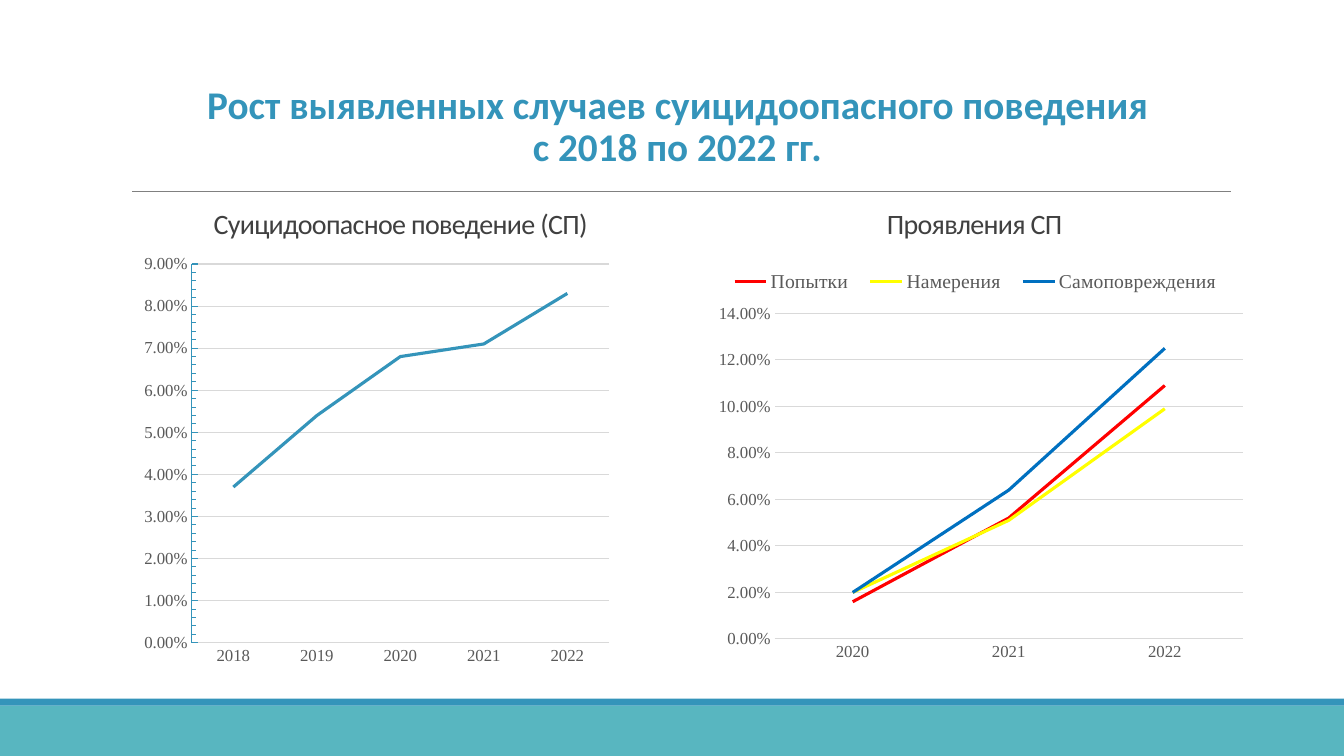
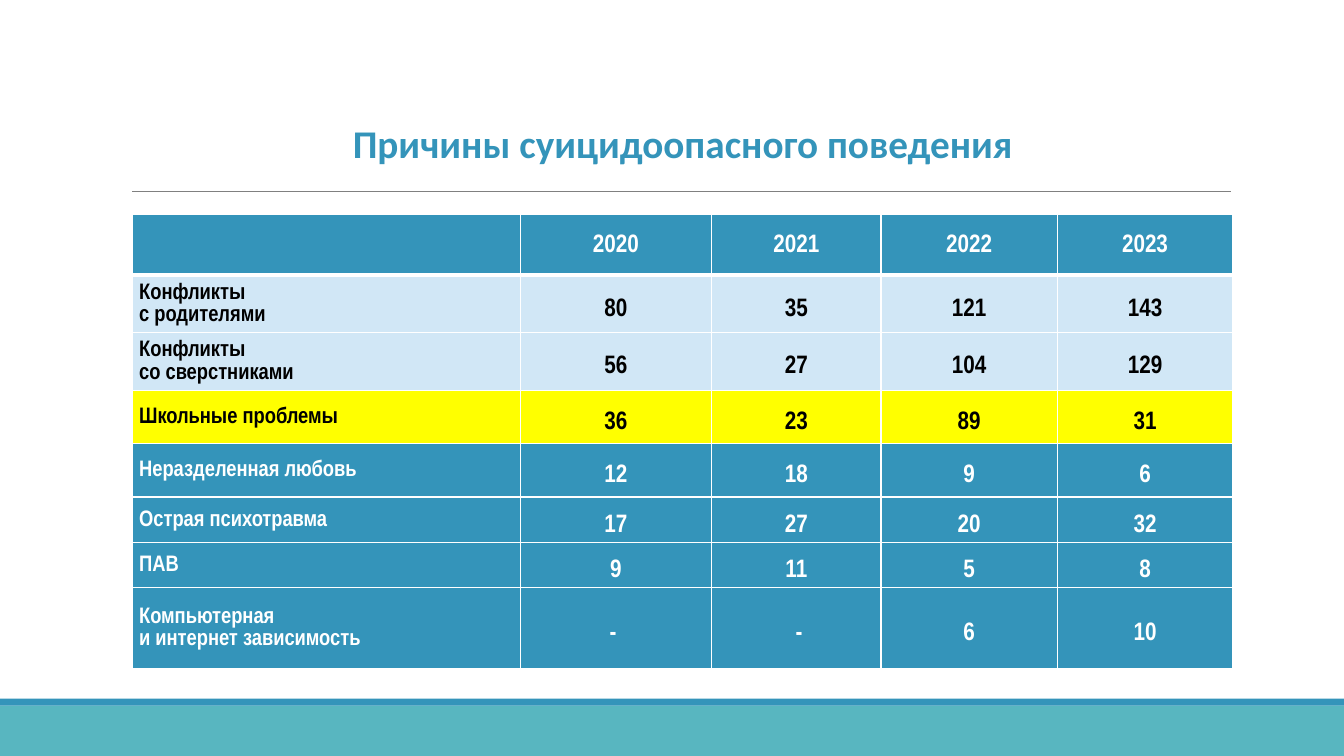
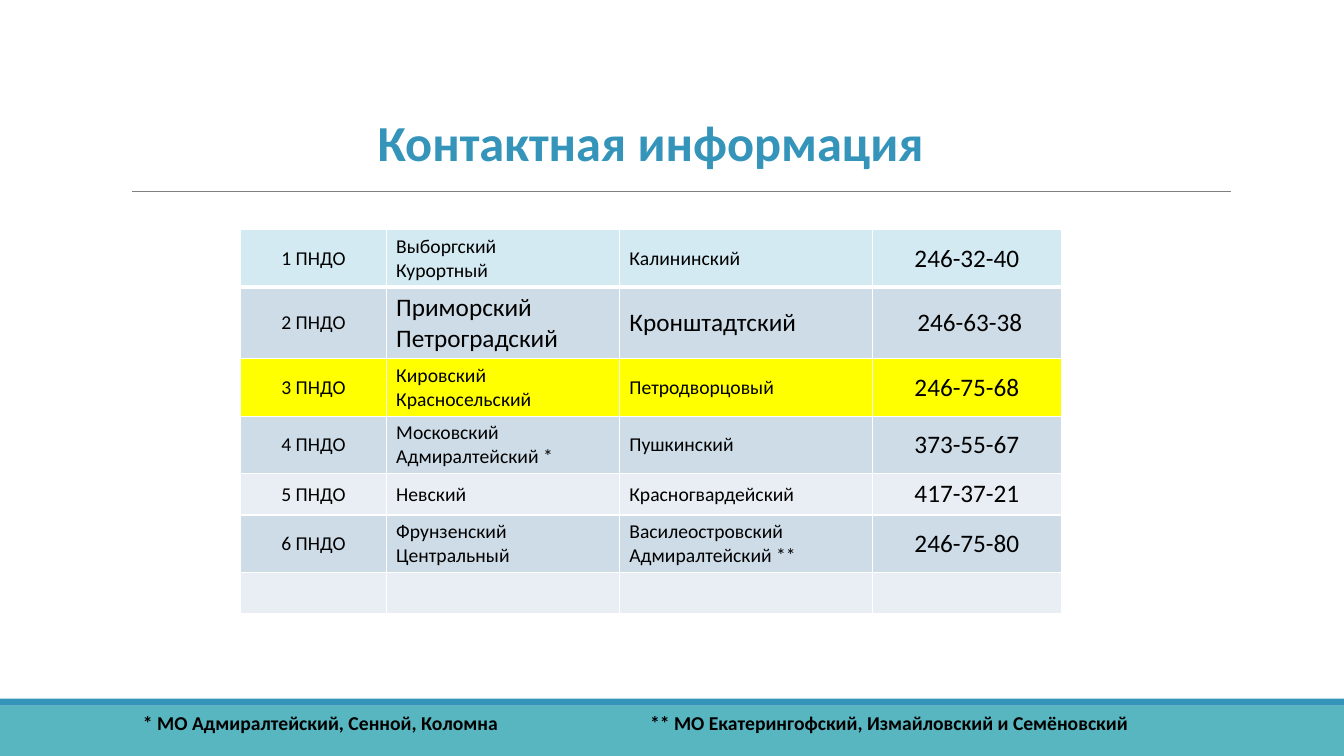
import collections

import lxml.etree
import pptx
import pptx.chart.data
import pptx.dml.color
import pptx.enum.chart
import pptx.enum.shapes
import pptx.enum.text
import pptx.oxml.ns
import pptx.util

SLIDE_WIDTH = pptx.util.Inches(13.33)
SLIDE_HEIGHT = pptx.util.Inches(7.5)

BLUE, TEAL, YELLOW = "3494BA", "58B6C0", "FFFF00"
BLACK, WHITE, RULE_GREY = "000000", "FFFFFF", "808080"
LABEL_GREY, GRID_GREY, HEADING_GREY = "595959", "D9D9D9", "404040"
PALE_BLUE, ICE, MIST, FROST = "D1E7F6", "D4EAF3", "CEDCE7", "E8EEF3"

CENTER = pptx.enum.text.PP_ALIGN.CENTER
LEFT = pptx.enum.text.PP_ALIGN.LEFT
MIDDLE = pptx.enum.text.MSO_ANCHOR.MIDDLE
TICK = pptx.enum.chart.XL_TICK_MARK
qn = pptx.oxml.ns.qn

# Every box is given in percent of the slide's width and height
Box = collections.namedtuple("Box", "left top width height")
Look = collections.namedtuple("Look", "size font color bold")


def across(percent):
    return round(SLIDE_WIDTH * percent / 100)


def down(percent):
    return round(SLIDE_HEIGHT * percent / 100)


def place(box):
    return across(box.left), down(box.top), across(box.width), down(box.height)


def rgb(color):
    return pptx.dml.color.RGBColor.from_string(color)


def style_font(font, look):
    font.size = pptx.util.Pt(look.size)
    font.name = look.font
    font.bold = look.bold
    font.color.rgb = rgb(look.color)


def style_line(line, color, width):
    line.color.rgb = rgb(color)
    line.width = pptx.util.Pt(width)


def write(frame, text, look, align=LEFT, spacing=1.0):
    frame.text = text
    frame.word_wrap = True
    for para in frame.paragraphs:
        para.alignment = align
        para.line_spacing = spacing
        for span in para.runs:
            style_font(span.font, look)


def add_text(page, box, text, look, align=LEFT, spacing=1.0):
    frame = page.shapes.add_textbox(*place(box)).text_frame
    write(frame, text, look, align, spacing)
    return frame


# Shared slide parts: bottom bands, rule and title
def add_page(deck, title, title_box, title_size):
    page = deck.slides.add_slide(deck.slide_layouts[6])
    for box, color in ((Box(0, 93.33, 100, 6.67), TEAL),
                       (Box(0, 92.4, 100, 0.93), BLUE)):
        band = page.shapes.add_shape(
            pptx.enum.shapes.MSO_SHAPE.RECTANGLE, *place(box))
        band.shadow.inherit = False
        band.fill.solid()
        band.fill.fore_color.rgb = rgb(color)
        band.line.fill.background()

    rule = page.shapes.add_connector(
        pptx.enum.shapes.MSO_CONNECTOR.STRAIGHT,
        across(9.83), down(25.33), across(91.58), down(25.33))
    style_line(rule.line, RULE_GREY, 0.5)
    lxml.etree.SubElement(rule.element.spPr, qn("a:effectLst"))

    look = Look(title_size, "Calibri", BLUE, True)
    frame = add_text(page, title_box, title, look, CENTER, 0.9)
    frame.vertical_anchor = MIDDLE
    return page


# Charts
def set_layout(parent, index, box, inner=False):
    for old in parent.findall(qn("c:layout")):
        parent.remove(old)
    layout = lxml.etree.Element(qn("c:layout"))
    parent.insert(index, layout)
    manual = lxml.etree.SubElement(layout, qn("c:manualLayout"))
    settings = [("layoutTarget", "inner")] if inner else []
    settings += [("xMode", "edge"), ("yMode", "edge")]
    settings += zip("xywh", box)
    for name, value in settings:
        lxml.etree.SubElement(manual, qn("c:" + name)).set("val", str(value))


def add_line_chart(page, box, kind, years, series, plot_box, top, step):
    data = pptx.chart.data.CategoryChartData(number_format="0.00%")
    data.categories = years
    for name, values, _ in series:
        data.add_series(name, values)
    chart = page.shapes.add_chart(kind, *place(box), data).chart
    chart.has_title = False
    chart.has_legend = False
    label = Look(12, "Times New Roman", LABEL_GREY, False)
    style_font(chart.font, label)
    set_layout(chart.element.find(".//" + qn("c:plotArea")), 0, plot_box, True)

    for axis in (chart.category_axis, chart.value_axis):
        axis.major_tick_mark = axis.minor_tick_mark = TICK.NONE
        style_font(axis.tick_labels.font, label)
    style_line(chart.category_axis.format.line, GRID_GREY, 0.75)

    scale = chart.value_axis
    scale.minimum_scale, scale.maximum_scale = 0, top
    scale.major_unit = step
    scale.tick_labels.number_format = "0.00%"
    scale.tick_labels.number_format_is_linked = False
    scale.format.line.fill.background()
    style_line(scale.major_gridlines.format.line, GRID_GREY, 0.75)

    for line, (_, _, color) in zip(chart.plots[0].series, series):
        style_line(line.format.line, color, 2.25)
        line.smooth = False
        line.marker.style = pptx.enum.chart.XL_MARKER_STYLE.NONE
    return chart


def add_ruled_scale(chart, minor_step):
    scale = chart.value_axis
    scale.major_tick_mark = scale.minor_tick_mark = TICK.INSIDE
    scale.minor_unit = minor_step
    style_line(scale.format.line, BLUE, 0.75)


def add_legend(chart, legend_box):
    chart.has_legend = True
    legend = chart.legend
    legend.position = pptx.enum.chart.XL_LEGEND_POSITION.TOP
    legend.include_in_layout = False
    style_font(legend.font, Look(14, "Times New Roman", LABEL_GREY, False))
    set_layout(chart.element.find(".//" + qn("c:legend")), 1, legend_box)


def add_chart_heading(page, box, text):
    frame = add_text(page, box, text, Look(20, "Calibri", HEADING_GREY, False))
    frame.paragraphs[0].runs[0].font._element.set("spc", "-50")


# Tables
def set_borders(cell, row):
    properties = cell._tc.get_or_add_tcPr()
    thick_side = {0: "B", 1: "T"}.get(row)
    for side in "LRTB":
        width = 3 if side == thick_side else 1
        border = lxml.etree.SubElement(properties, qn("a:ln" + side))
        border.set("w", str(pptx.util.Pt(width)))
        fill = lxml.etree.SubElement(border, qn("a:solidFill"))
        lxml.etree.SubElement(fill, qn("a:srgbClr")).set("val", WHITE)


def add_grid(page, box, columns, rows, fills):
    """Table whose columns and rows share the box in the given proportions."""
    table = page.shapes.add_table(len(rows), len(columns), *place(box)).table
    table.horz_banding = False
    for column, part in zip(table.columns, columns):
        column.width = round(across(box.width) * part / sum(columns))
    for row, part in zip(table.rows, rows):
        row.height = round(down(box.height) * part / sum(rows))
    for i, color in enumerate(fills):
        for cell in table.rows[i].cells:
            set_borders(cell, i)
            cell.fill.solid()
            cell.fill.fore_color.rgb = rgb(color)
            cell.vertical_anchor = MIDDLE
    return table


def add_causes_table(page, box):
    records = [
        ("", "2020", "2021", "2022", "2023"),
        ("Конфликты\vс родителями", "80", "35", "121", "143"),
        ("Конфликты\vсо сверстниками", "56", "27", "104", "129"),
        ("Школьные проблемы", "36", "23", "89", "31"),
        ("Неразделенная любовь", "12", "18", "9", "6"),
        ("Острая психотравма", "17", "27", "20", "32"),
        ("ПАВ", "9", "11", "5", "8"),
        ("Компьютерная\vи интернет зависимость", "- ", " -", "6", "10"),
    ]
    fills = [BLUE, PALE_BLUE, PALE_BLUE, YELLOW] + [BLUE] * 4
    table = add_grid(page, box, (3.85, 1.9, 1.68, 1.75, 1.74),
                     (0.6, 0.57, 0.57, 0.53, 0.53, 0.44, 0.44, 0.8), fills)
    for i, record in enumerate(records):
        color = WHITE if fills[i] == BLUE else BLACK
        for j, text in enumerate(record):
            cell = table.cell(i, j)
            cell.margin_left = cell.margin_right = pptx.util.Inches(0.07)
            cell.margin_top = cell.margin_bottom = 0
            look = Look(18 if j else 16, "Arial Narrow", color, True)
            write(cell.text_frame, text, look, CENTER if j else LEFT,
                  1.5 if i and j else 1.07)


def add_contacts_table(page, box):
    records = [
        ("1 ПНДО", "Выборгский\nКурортный", "Калининский", "246-32-40"),
        ("2 ПНДО", "Приморский\nПетроградский", "Кронштадтский", " 246-63-38"),
        ("3 ПНДО", "Кировский Красносельский", "Петродворцовый", "246-75-68"),
        ("4 ПНДО", "Московский\nАдмиралтейский *", "Пушкинский", "373-55-67"),
        ("5 ПНДО", "Невский", "Красногвардейский", "417-37-21"),
        ("6 ПНДО", "Фрунзенский\nЦентральный",
         "Василеостровский\nАдмиралтейский **", "246-75-80"),
    ]
    table = add_grid(page, box, (1.44, 2.31, 2.51, 1.87),
                     (0.57, 0.71, 0.57, 0.57, 0.41, 0.57, 0.41),
                     (ICE, MIST, YELLOW, MIST, FROST, MIST, FROST))
    for i, record in enumerate(records):
        for j, text in enumerate(record):
            large = j == 3 or (i == 1 and j > 0)
            look = Look(18 if large else 14, "Calibri", BLACK, False)
            write(table.cell(i, j).text_frame, text, look,
                  CENTER if j in (0, 3) else LEFT)


# Slides
def build_growth(deck):
    page = add_page(
        deck,
        "Рост выявленных случаев суицидоопасного поведения\nс 2018 по 2022 гг.",
        Box(9.45, 10, 81.9, 13.87), 28)
    kinds = pptx.enum.chart.XL_CHART_TYPE
    behaviour = add_line_chart(
        page, Box(9.45, 31.47, 36.98, 57.6), kinds.LINE_STACKED,
        ("2018", "2019", "2020", "2021", "2022"),
        [("Суицидоопасное поведение", (0.037, 0.054, 0.068, 0.071, 0.083), BLUE)],
        (0.13, 0.06, 0.84, 0.87), 0.09, 0.01)
    add_ruled_scale(behaviour, 0.002)
    forms = add_line_chart(
        page, Box(51.83, 32.4, 41.48, 56.67), kinds.LINE,
        ("2020", "2021", "2022"),
        [("Попытки", (0.016, 0.052, 0.109), "FF0000"),
         ("Намерения", (0.02, 0.051, 0.099), YELLOW),
         ("Самоповреждения", (0.02, 0.064, 0.125), "0070C0")],
        (0.14, 0.16, 0.84, 0.76), 0.14, 0.02)
    add_legend(forms, (0.04, 0.04, 0.92, 0.09))
    add_chart_heading(page, Box(15.15, 26.67, 30.6, 5.87),
                      "Суицидоопасное поведение (СП)")
    add_chart_heading(page, Box(65.25, 26.67, 16.05, 5.87), "Проявления СП")


def build_causes(deck):
    page = add_page(deck, "Причины суицидоопасного поведения",
                    Box(9.83, 15.47, 81.9, 7.6), 28)
    add_causes_table(page, Box(9.83, 28.4, 81.9, 59.73))


def build_contacts(deck):
    page = add_page(deck, "Контактная информация",
                    Box(10.58, 12.27, 75.68, 13.87), 36)
    add_contacts_table(page, Box(17.92, 30.4, 61.05, 50.8))
    note = Look(14, "Calibri", BLACK, True)
    add_text(page, Box(9.9, 93.33, 31.8, 4.53),
             "* МО Адмиралтейский, Сенной, Коломна", note)
    add_text(page, Box(47.63, 93.33, 43.73, 4.53),
             "** МО Екатерингофский, Измайловский и Семёновский", note)


def main():
    deck = pptx.Presentation()
    deck.slide_width, deck.slide_height = SLIDE_WIDTH, SLIDE_HEIGHT
    for build in (build_growth, build_causes, build_contacts):
        build(deck)
    deck.save("out.pptx")


if __name__ == "__main__":
    main()
